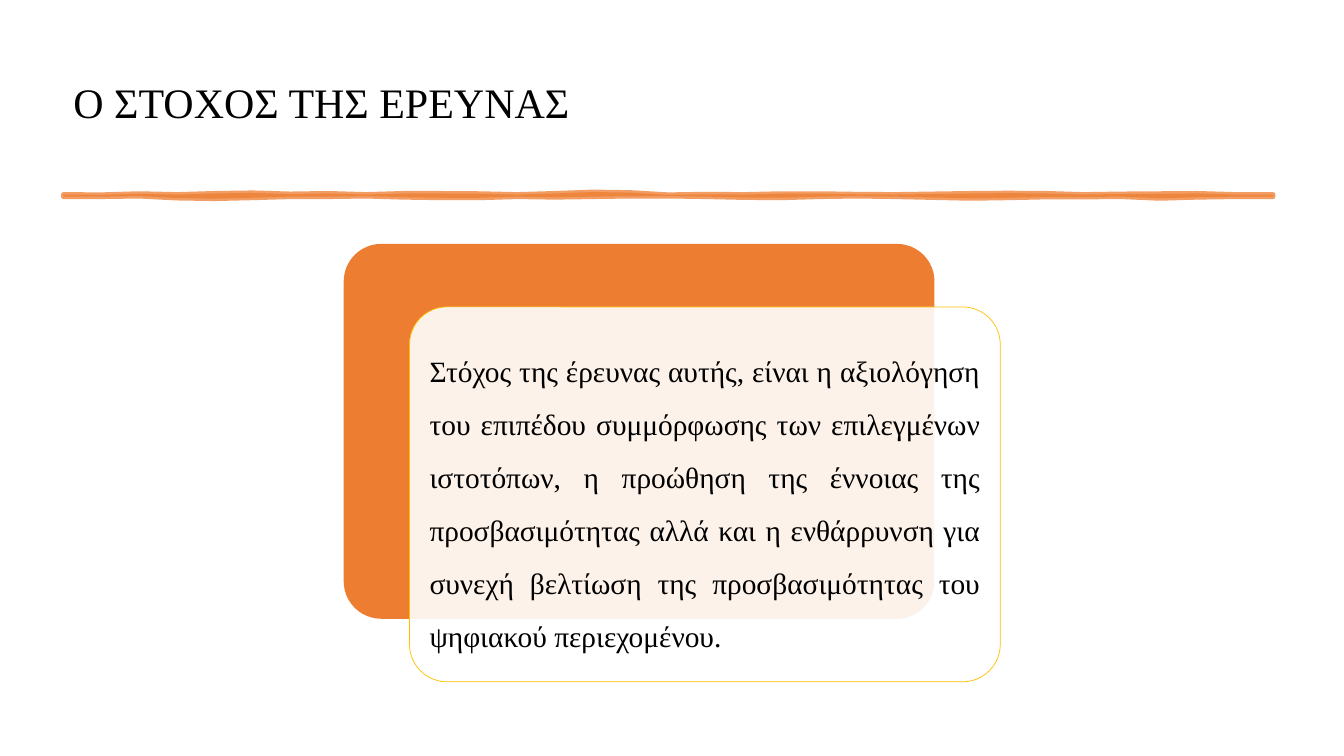
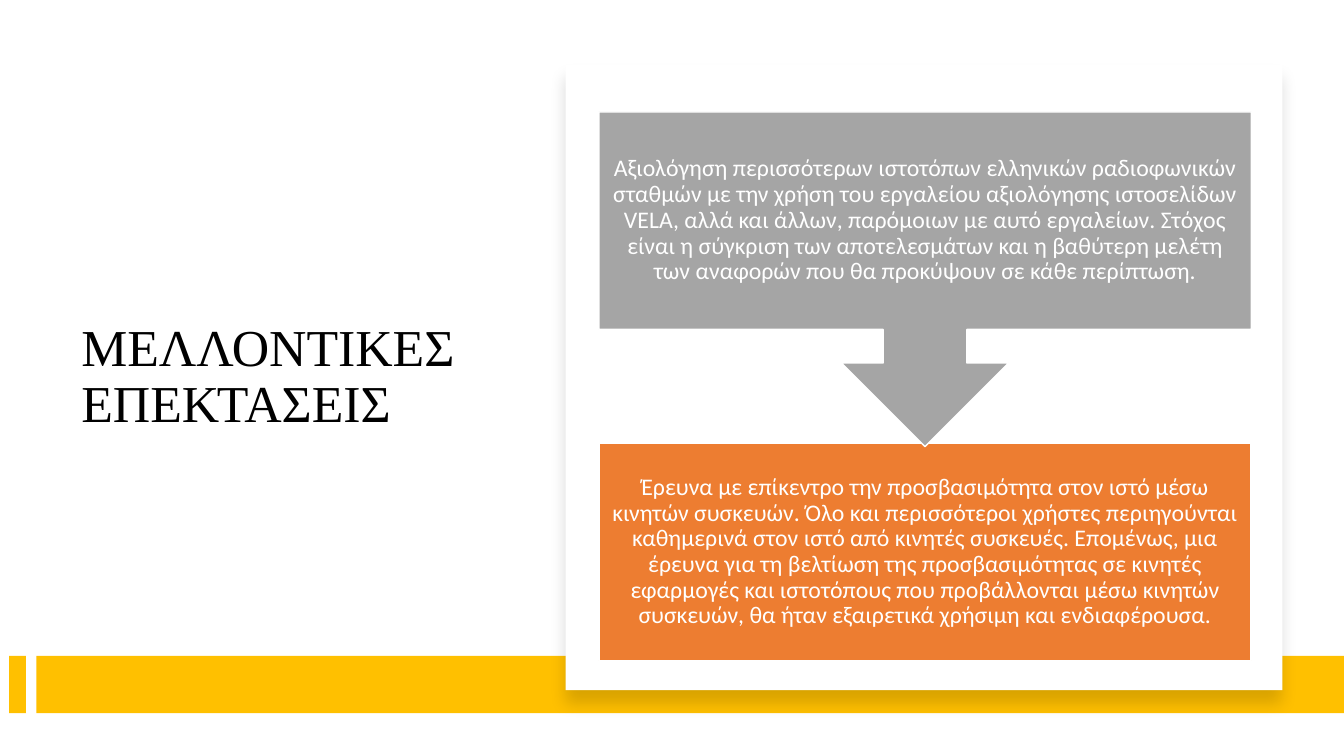
from lxml import etree
from pptx import Presentation
from pptx.dml.color import RGBColor
from pptx.enum.shapes import MSO_SHAPE
from pptx.enum.text import MSO_ANCHOR, PP_ALIGN
from pptx.oxml.ns import qn
from pptx.util import Pt

RECTANGLE = MSO_SHAPE.RECTANGLE
ROUNDED = MSO_SHAPE.ROUNDED_RECTANGLE
DOWN_CALLOUT = MSO_SHAPE.DOWN_ARROW_CALLOUT
MIDDLE = MSO_ANCHOR.MIDDLE
LEFT, CENTER, JUSTIFY = PP_ALIGN.LEFT, PP_ALIGN.CENTER, PP_ALIGN.JUSTIFY

ORANGE, GOLD, GRAY = "ED7D31", "FFC000", "A5A5A5"
WHITE, BLACK = "FFFFFF", "000000"
SERIF, SANS = "Times New Roman", "Calibri"
SLIDE_WIDTH, SLIDE_HEIGHT = 960, 540

GOAL_TITLE = "Ο ΣΤΟΧΟΣ ΤΗΣ ΕΡΕΥΝΑΣ"
GOAL_TEXT = (
    "Στόχος της έρευνας αυτής, είναι η αξιολόγηση του επιπέδου συμμόρφωσης των "
    "επιλεγμένων ιστοτόπων, η προώθηση της έννοιας της προσβασιμότητας αλλά και η "
    "ενθάρρυνση για συνεχή βελτίωση της προσβασιμότητας του ψηφιακού περιεχομένου."
)
FUTURE_TITLE = "ΜΕΛΛΟΝΤΙΚΕΣ ΕΠΕΚΤΑΣΕΙΣ"
FIRST_STEP = (
    "Αξιολόγηση περισσότερων ιστοτόπων ελληνικών ραδιοφωνικών σταθμών με την χρήση "
    "του εργαλείου αξιολόγησης ιστοσελίδων VELA, αλλά και άλλων, παρόμοιων με αυτό "
    "εργαλείων. Στόχος είναι η σύγκριση των αποτελεσμάτων και η βαθύτερη μελέτη των "
    "αναφορών που θα προκύψουν σε κάθε περίπτωση."
)
SECOND_STEP = (
    "Έρευνα με επίκεντρο την προσβασιμότητα στον ιστό μέσω κινητών συσκευών. Όλο και "
    "περισσότεροι χρήστες περιηγούνται καθημερινά στον ιστό από κινητές συσκευές. "
    "Επομένως, μια έρευνα για τη βελτίωση της προσβασιμότητας σε κινητές εφαρμογές "
    "και ιστοτόπους που προβάλλονται μέσω κινητών συσκευών, θα ήταν εξαιρετικά "
    "χρήσιμη και ενδιαφέρουσα."
)

BRUSH_TOP = [0, 0.2, -0.6, 0, -0.8, -1.2, -0.4, -0.8, 0, -0.8, -0.8, -0.6, 0, -0.8,
             -1.8, -1.4, 0.2, -0.2, 0, -0.6, -0.6, -0.2, 0, -0.4, -0.8, -1, -0.8, 0,
             -0.4, -0.6, -0.8, 0, 0]
BRUSH_BOTTOM = [0, 0, -0.4, 1, 1.4, 0.8, 0, 0, -0.4, 0.4, 0.8, 0.8, 0, 0.4, 0, -0.4,
                -0.4, 0, 0.6, 0.8, 0, -0.4, 0, 0.6, 1.2, 0.8, 0.2, 0.2, 0, 1.2, 0.4,
                0, 0]


def color(value):
    """Turn a hex string into a colour."""
    return RGBColor.from_string(value)


def apply_format(target, **values):
    """Set every given attribute on the target."""
    for name, value in values.items():
        setattr(target, name, value)


def set_alpha(fill_element, percent):
    """Make the solid fill in an element partly transparent."""
    swatch = fill_element.find(".//" + qn("a:srgbClr"))
    etree.SubElement(swatch, qn("a:alpha"), val=str(percent * 1000))


def paint(shape, fill, line=None, width=1, alpha=100, line_alpha=100):
    """Set fill and line of a shape and remove its shadow."""
    shape.shadow.inherit = False
    shape.fill.solid()
    shape.fill.fore_color.rgb = color(fill)
    properties = shape._element.spPr
    if alpha < 100:
        set_alpha(properties.find(qn("a:solidFill")), alpha)
    if line is None:
        shape.line.fill.background()
        return
    shape.line.color.rgb = color(line)
    shape.line.width = Pt(width)
    if line_alpha < 100:
        set_alpha(properties.find(qn("a:ln")), line_alpha)


def write(shape, text, size, font=SERIF, ink=BLACK, align=LEFT, spacing=0.9,
          inset=7.2, after=0):
    """Fill a shape with one formatted paragraph."""
    frame = shape.text_frame
    apply_format(frame, word_wrap=True, vertical_anchor=MIDDLE,
                 **{f"margin_{side}": Pt(inset)
                    for side in ("left", "right", "top", "bottom")})
    paragraph = frame.paragraphs[0]
    apply_format(paragraph, alignment=align, line_spacing=spacing,
                 space_after=Pt(after))
    run = paragraph.add_run()
    run.text = text
    apply_format(run.font, name=font, size=Pt(size))
    run.font.color.rgb = color(ink)


def add_block(slide, kind, box, fill, **style):
    """Add a painted preset shape in a box of points."""
    shape = slide.shapes.add_shape(kind, *map(Pt, box))
    paint(shape, fill, **style)
    return shape


def add_title(slide, text, box, size):
    """Add the slide title in the shared style."""
    write(slide.shapes.add_textbox(*map(Pt, box)), text, size)


def add_brush_line(slide, left, top, width, thickness):
    """Draw a hand-drawn looking rule from the brush offsets."""
    step = width / (len(BRUSH_TOP) - 1)
    upper = [(Pt(left + index * step), Pt(top + offset))
             for index, offset in enumerate(BRUSH_TOP)]
    lower = [(Pt(left + index * step), Pt(top + thickness + offset))
             for index, offset in enumerate(BRUSH_BOTTOM)]
    outline = upper + lower[::-1]
    builder = slide.shapes.build_freeform(*outline[0], scale=1.0)
    builder.add_line_segments(outline[1:], close=True)
    paint(builder.convert_to_shape(), ORANGE, line=ORANGE, width=3.5, alpha=75,
          line_alpha=75)


def add_goal_card(slide, left, top, width, height):
    """Add two overlapping rounded cards, the front one with the goal."""
    shift_x, shift_y = 47, 45
    size = (width - shift_x, height - shift_y)
    back = add_block(slide, ROUNDED, (left, top, *size), ORANGE)
    front = add_block(slide, ROUNDED, (left + shift_x, top + shift_y, *size), WHITE,
                      line=GOLD, width=0.5, alpha=90)
    for card in (back, front):
        card.adjustments[0] = 0.1
    write(front, GOAL_TEXT, 21, align=JUSTIFY, spacing=1.5, inset=6.5, after=7.35)


def add_gold_band(slide, top, height):
    """Add the short and the long bar across the foot of the slide."""
    for left, right in ((6.5, 18.5), (26, SLIDE_WIDTH)):
        add_block(slide, RECTANGLE, (left, top, right - left, height), GOLD)


def add_panel(slide, box):
    """Add a white panel with a soft shadow below it."""
    panel = add_block(slide, RECTANGLE, box, WHITE)
    effects = panel._element.spPr.find(qn("a:effectLst"))
    shadow = etree.SubElement(effects, qn("a:outerShdw"), blurRad=str(Pt(11)),
                              dist=str(Pt(10)), dir="5400000", rotWithShape="0")
    swatch = etree.SubElement(shadow, qn("a:srgbClr"), val=BLACK)
    etree.SubElement(swatch, qn("a:alpha"), val="15000")


def add_steps(slide, left, top, width, height):
    """Add a callout that points down to a second box."""
    box_height, callout_height = 155.5, 239
    second = add_block(slide, RECTANGLE,
                       (left, top + height - box_height, width, box_height),
                       ORANGE, line=WHITE)
    first = add_block(slide, DOWN_CALLOUT, (left, top, width, callout_height),
                      GRAY, line=WHITE)
    for shape, text in ((first, FIRST_STEP), (second, SECOND_STEP)):
        write(shape, text, 17, font=SANS, ink=WHITE, align=CENTER, inset=9.5,
              after=5.95)


def build_goal_slide(slide):
    """Build the slide on the goal of the research."""
    add_title(slide, GOAL_TITLE, (45.36, 45, 870, 60), 30)
    add_brush_line(slide, 45.36, 139, 864, 1.5)
    add_goal_card(slide, 245.5, 174.25, 469, 312.75)


def build_future_slide(slide):
    """Build the slide on future extensions."""
    add_title(slide, FUTURE_TITLE, (51, 86.4, 299, 367), 37)
    add_gold_band(slide, 468.5, 41)
    add_panel(slide, (404, 46, 512, 447))
    add_steps(slide, 427.75, 80, 466, 392)


def main():
    """Create and save the presentation."""
    presentation = Presentation()
    apply_format(presentation, slide_width=Pt(SLIDE_WIDTH),
                 slide_height=Pt(SLIDE_HEIGHT))
    for build in (build_goal_slide, build_future_slide):
        build(presentation.slides.add_slide(presentation.slide_layouts[6]))
    presentation.save("out.pptx")


if __name__ == "__main__":
    main()
